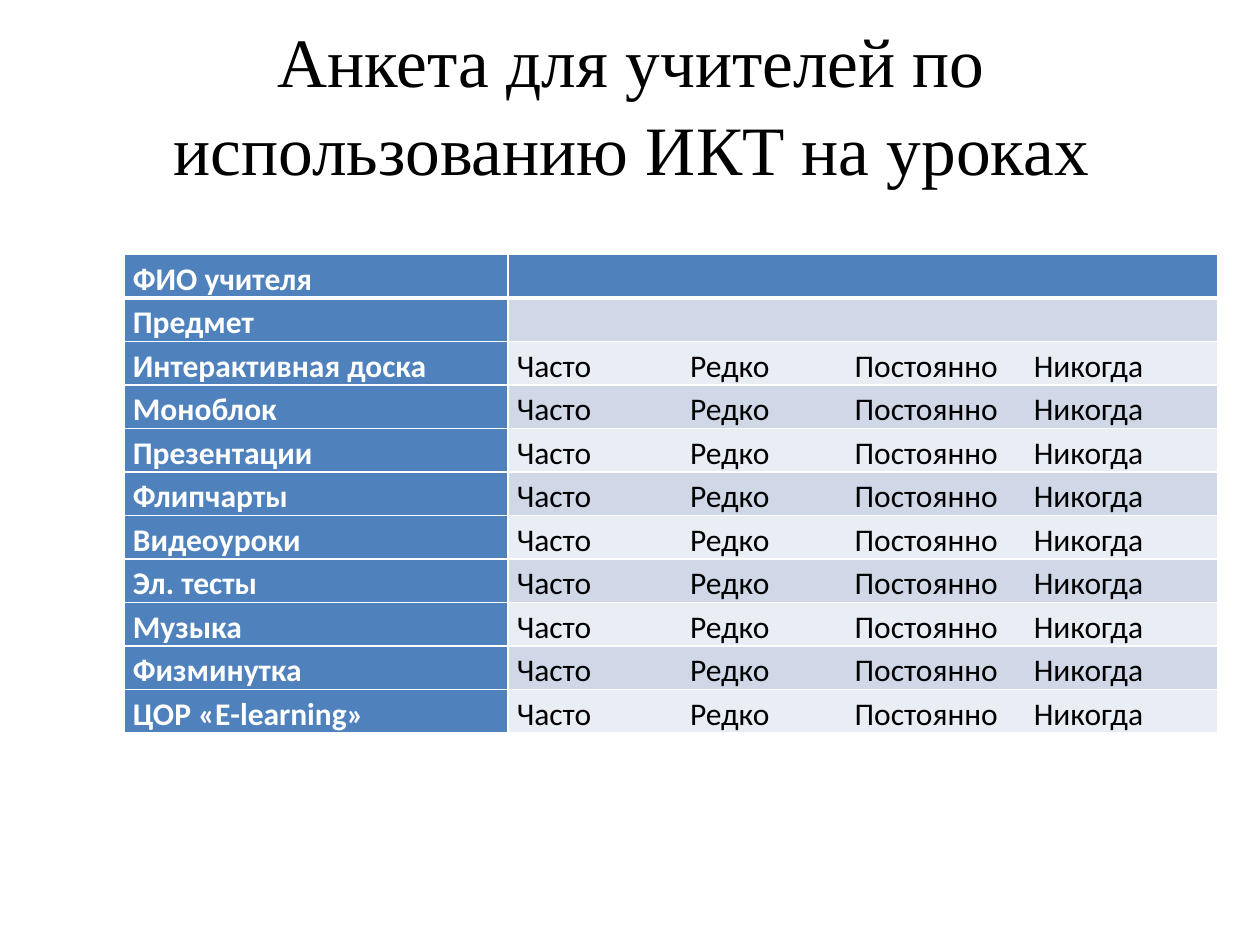
from lxml import etree
from pptx import Presentation
from pptx.dml.color import RGBColor
from pptx.enum.text import MSO_ANCHOR, PP_ALIGN
from pptx.oxml.ns import qn
from pptx.util import Cm, Pt

CENTER = PP_ALIGN.CENTER
BOTTOM = MSO_ANCHOR.BOTTOM
BLUE, WHITE, BLACK = "4F81BD", "FFFFFF", "000000"
BANDS = ("E9EDF4", "D0D8E8")

TITLE = "Анкета для учителей по использованию ИКТ на уроках"
FIELDS = ["ФИО учителя", "Предмет"]
TOOLS = ["Интерактивная доска", "Моноблок", "Презентации", "Флипчарты",
         "Видеоуроки", "Эл. тесты", "Музыка", "Физминутка",
         "ЦОР «Е-learning»"]
CHOICES = "\t".join(["Часто", "Редко", "Постоянно", "Никогда"])
STOPS = (3.49, 6.81, 10.42)


def color(code):
    return RGBColor.from_string(code)


def style(para, face, size, code, bold=False):
    for run in para.runs:
        font = run.font
        font.name, font.size, font.bold = face, Pt(size), bold
        font.color.rgb = color(code)


def add_tabs(para):
    tabs = etree.SubElement(para._p.get_or_add_pPr(), qn("a:tabLst"))
    for stop in STOPS:
        etree.SubElement(tabs, qn("a:tab"), pos=str(Cm(stop)), algn="l")


def add_edges(cell, head):
    props = cell._tc.get_or_add_tcPr()
    for side in "LRTB":
        width = 3 if head and side == "B" else 1
        line = etree.SubElement(props, qn("a:ln" + side), w=str(Pt(width)))
        fill = etree.SubElement(line, qn("a:solidFill"))
        etree.SubElement(fill, qn("a:srgbClr"), val=WHITE)


def fill_cell(cell, text, back, ink, bold, head):
    add_edges(cell, head)
    cell.fill.solid()
    cell.fill.fore_color.rgb = color(back)
    cell.margin_left = cell.margin_right = Cm(0.18)
    cell.margin_top = cell.margin_bottom = 0
    para = cell.text_frame.paragraphs[0]
    para.text = text
    if "\t" in text:
        add_tabs(para)
    para.line_spacing = 1.15
    style(para, "Calibri", 18, ink, bold)


def add_title(slide, left, top, width, height):
    box = slide.shapes.add_textbox(Cm(left), Cm(top), Cm(width), Cm(height))
    frame = box.text_frame
    frame.word_wrap = True
    frame.vertical_anchor = BOTTOM
    frame.margin_bottom = Cm(0.69)
    frame.text = TITLE
    para = frame.paragraphs[0]
    para.alignment = CENTER
    para.line_spacing = 1.05
    style(para, "Times New Roman", 39.6, BLACK)


def add_survey(slide, left, top, width, height):
    names = FIELDS + TOOLS
    table = slide.shapes.add_table(len(names), 2, Cm(left), Cm(top),
                                   Cm(width), Cm(height)).table
    table.horz_banding = False
    table.columns[0].width = Cm(7.74)
    table.columns[1].width = Cm(width - 7.74)
    for row, name in enumerate(names):
        head = row == 0
        table.rows[row].height = Cm(height / len(names))
        # Name on the left, choices on the right
        fill_cell(table.cell(row, 0), name, BLUE, WHITE, True, head)
        text = CHOICES if name in TOOLS else ""
        back = BLUE if head else BANDS[row % 2]
        fill_cell(table.cell(row, 1), text, back, BLACK, False, head)


def main():
    deck = Presentation()
    deck.slide_width, deck.slide_height = Cm(25.4), Cm(19.05)
    slide = deck.slides.add_slide(deck.slide_layouts[6])
    add_title(slide, 1.3, 1.32, 22.86, 3.18)
    add_survey(slide, 2.5, 5.13, 22.05, 9.63)
    deck.save("out.pptx")


if __name__ == "__main__":
    main()
